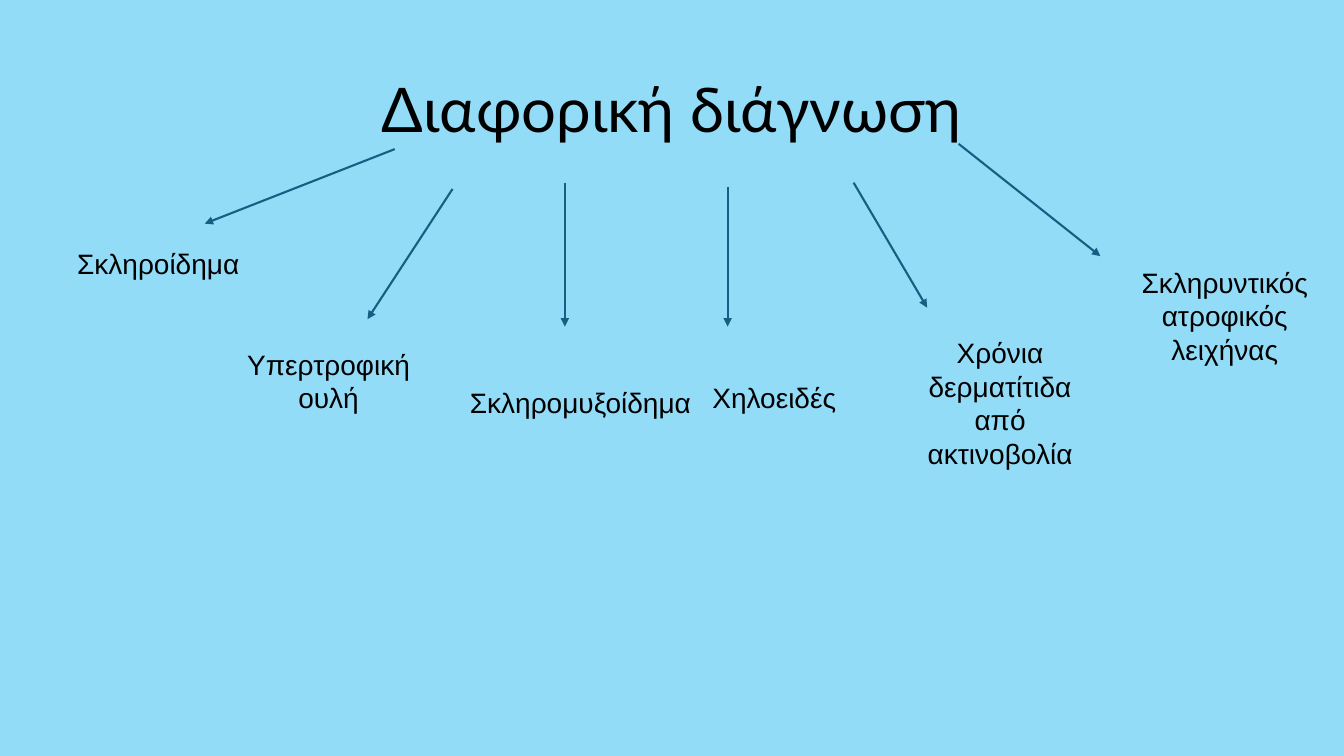
"""Builds a slide that fans a differential diagnosis out into six conditions."""
from dataclasses import dataclass

from lxml import etree
from pptx import Presentation
from pptx.dml.color import RGBColor
from pptx.enum.shapes import MSO_CONNECTOR
from pptx.enum.text import MSO_ANCHOR, MSO_AUTO_SIZE, PP_ALIGN
from pptx.oxml.ns import qn
from pptx.slide import Slide
from pptx.util import Emu, Pt

EMU_PER_PX = 9525
BLANK_LAYOUT = 6
STRAIGHT = MSO_CONNECTOR.STRAIGHT
LEFT, CENTER = PP_ALIGN.LEFT, PP_ALIGN.CENTER
TOP, MIDDLE = MSO_ANCHOR.TOP, MSO_ANCHOR.MIDDLE
FIT_SHAPE, NO_FIT = MSO_AUTO_SIZE.SHAPE_TO_FIT_TEXT, MSO_AUTO_SIZE.NONE


@dataclass(frozen=True)
class Theme:
    background: RGBColor = RGBColor(0x93, 0xDC, 0xF8)
    ink: RGBColor = RGBColor(0, 0, 0)
    arrow: RGBColor = RGBColor(0x15, 0x60, 0x82)
    title_font: str = "Lato"
    label_font: str = "Arial"
    title_size: float = 44
    label_size: float = 20
    arrow_width: float = 1.5


@dataclass(frozen=True)
class Box:
    left: int
    top: int
    width: int
    height: int


@dataclass(frozen=True)
class Condition:
    name: str
    box: Box
    arrow_start: tuple[int, int]
    arrow_end: tuple[int, int]
    align: PP_ALIGN = CENTER


THEME = Theme()
TITLE_BOX = Box(88, 38, 1104, 139)
CONDITIONS = (
    Condition("Σκληροίδημα", Box(64, 230, 192, 42), (376, 142), (195, 213), LEFT),
    Condition("Υπερτροφική ουλή", Box(217, 326, 192, 74), (431, 180), (350, 304)),
    Condition("Σκληρομυξοίδημα", Box(438, 362, 272, 42), (538, 174), (538, 311), LEFT),
    Condition("Χηλοειδές", Box(669, 358, 192, 42), (693, 178), (693, 311), LEFT),
    Condition("Χρόνια δερματίτιδα από ακτινοβολία", Box(848, 315, 209, 139),
              (813, 174), (883, 293)),
    Condition("Σκληρυντικός ατροφικός λειχήνας", Box(1062, 248, 209, 135),
              (913, 137), (1048, 244)),
)


def px(length: int) -> Emu:
    return Emu(length * EMU_PER_PX)


def add_text(slide: Slide, text: str, box: Box, *, font: str, size: float,
             align: PP_ALIGN = CENTER, anchor: MSO_ANCHOR = TOP,
             fit: MSO_AUTO_SIZE = FIT_SHAPE, line_spacing: float = 1.0) -> None:
    frame = slide.shapes.add_textbox(
        px(box.left), px(box.top), px(box.width), px(box.height)).text_frame
    frame.word_wrap = True
    frame.auto_size = fit
    frame.vertical_anchor = anchor
    paragraph = frame.paragraphs[0]
    paragraph.alignment = align
    paragraph.line_spacing = line_spacing
    run = paragraph.add_run()
    run.text = text
    run.font.name = font
    run.font.size = Pt(size)
    run.font.color.rgb = THEME.ink


def add_arrow(slide: Slide, start: tuple[int, int], end: tuple[int, int]) -> None:
    arrow = slide.shapes.add_connector(STRAIGHT, *map(px, start + end))
    arrow.line.color.rgb = THEME.arrow
    arrow.line.width = Pt(THEME.arrow_width)
    properties = arrow.line._get_or_add_ln()
    etree.SubElement(properties, qn("a:tailEnd"), type="triangle")
    etree.SubElement(properties.getparent(), qn("a:effectLst"))


def main() -> None:
    presentation = Presentation()
    presentation.slide_width, presentation.slide_height = px(1280), px(720)
    slide = presentation.slides.add_slide(presentation.slide_layouts[BLANK_LAYOUT])
    background = slide.background.fill
    background.solid()
    background.fore_color.rgb = THEME.background

    add_text(slide, "Διαφορική διάγνωση", TITLE_BOX, font=THEME.title_font,
             size=THEME.title_size, anchor=MIDDLE, fit=NO_FIT, line_spacing=0.9)
    for condition in CONDITIONS:
        add_arrow(slide, condition.arrow_start, condition.arrow_end)
        add_text(slide, condition.name, condition.box, font=THEME.label_font,
                 size=THEME.label_size, align=condition.align)
    presentation.save("out.pptx")


if __name__ == "__main__":
    main()
